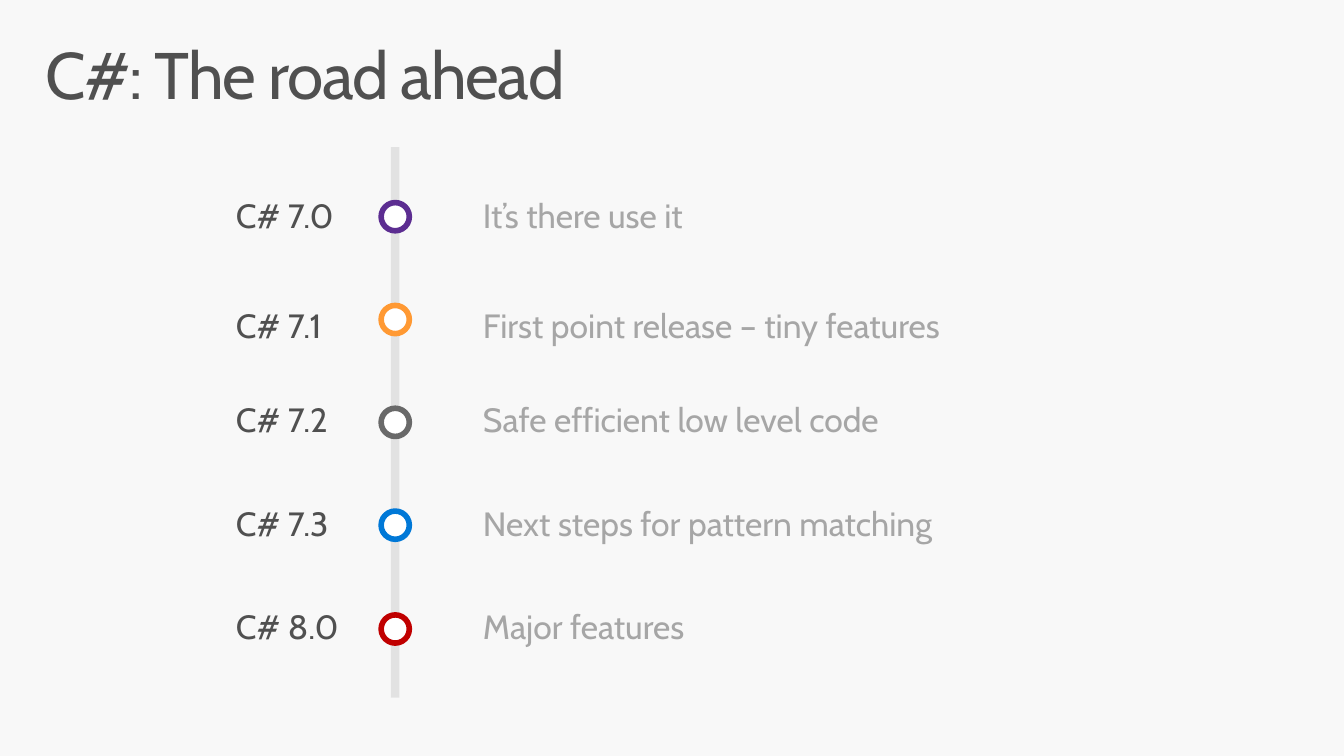
from lxml import etree
from pptx import Presentation
from pptx.dml.color import RGBColor
from pptx.enum.shapes import MSO_CONNECTOR, MSO_SHAPE
from pptx.enum.text import MSO_ANCHOR, MSO_AUTO_SIZE, PP_ALIGN
from pptx.oxml.ns import qn
from pptx.util import Pt

STRAIGHT = MSO_CONNECTOR.STRAIGHT
DOT = MSO_SHAPE.FLOWCHART_CONNECTOR
TOP = MSO_ANCHOR.TOP
LEFT = PP_ALIGN.LEFT
FIT_SHAPE = MSO_AUTO_SIZE.SHAPE_TO_FIT_TEXT
NO_FIT = MSO_AUTO_SIZE.NONE

COLORS = {
    "background": "F8F8F8",
    "track": "CDCDCD",
    "dark": "505050",
    "light": "A6A6A6",
    "white": "FFFFFF",
    "purple": "5C2D91",
    "orange": "FF9933",
    "gray": "696969",
    "blue": "0078D7",
    "red": "C00000",
}

RELEASES = [
    ("C# 7.0", "It’s there use it", 256, 182, "purple"),
    ("C# 7.1", "First point release – tiny features", 522, 291, "orange"),
    ("C# 7.2", "Safe efficient low level code", 452, 384, "gray"),
    ("C# 7.3", "Next steps for pattern matching", 512, 487, "blue"),
    ("C# 8.0", "Major features", 256, 590, "red"),
]


def px(n):
    return n * 9144


def rgb(name):
    return RGBColor.from_string(COLORS[name])


class Deck:
    font = "Cabin"

    def __init__(self, width, height):
        self.prs = Presentation()
        self.prs.slide_width = px(width)
        self.prs.slide_height = px(height)
        self.s = self.prs.slides.add_slide(self.prs.slide_layouts[6])
        fill = self.s.background.fill
        fill.solid()
        fill.fore_color.rgb = rgb("background")

    def line(self, x1, y1, x2, y2, color, width, opacity):
        sp = self.s.shapes.add_connector(STRAIGHT, px(x1), px(y1), px(x2), px(y2))
        sp.line.color.rgb = rgb(color)
        sp.line.width = Pt(width)
        clr = next(sp.line._ln.iter(qn("a:srgbClr")))
        etree.SubElement(clr, qn("a:alpha")).set("val", str(opacity * 1000))
        etree.SubElement(sp._element.spPr, qn("a:effectLst"))

    def dot(self, x, y, size, color):
        sp = self.s.shapes.add_shape(DOT, px(x), px(y), px(size), px(size))
        sp.shadow.inherit = False
        sp.fill.solid()
        sp.fill.fore_color.rgb = rgb("white")
        sp.line.color.rgb = rgb(color)
        sp.line.width = Pt(4)

    def text(self, x, y, w, h, text, color, size=24, inset=(20, 16),
             wrap=True, fit=FIT_SHAPE, after=6, spacing=None):
        sp = self.s.shapes.add_textbox(px(x), px(y), px(w), px(h))
        tf = sp.text_frame
        tf.margin_left = tf.margin_right = px(inset[0])
        tf.margin_top = tf.margin_bottom = px(inset[1])
        tf.vertical_anchor = TOP
        tf.word_wrap = wrap
        tf.auto_size = fit
        p = tf.paragraphs[0]
        p.alignment = LEFT
        p.line_spacing = 0.9
        p.space_after = Pt(after)
        r = p.add_run()
        r.text = text
        r.font.name = self.font
        r.font.size = Pt(size)
        r.font.color.rgb = rgb(color)
        if spacing is not None:
            r.font._element.set("spc", str(spacing * 100))


def main():
    deck = Deck(1333, 750)
    deck.line(392, 146, 392, 692, "track", 6, 50)
    deck.text(29, 32, 637, 98, "C#: The road ahead", "dark", size=47,
              inset=(16, 10), fit=NO_FIT, after=0, spacing=-1)
    for i, (version, summary, width, top, color) in enumerate(RELEASES):
        deck.dot(378, 201 + i * 409 // 4, 28, color)
        deck.text(214, top, 150, 69, version, "dark")
        deck.text(459, top, width, 69, summary, "light", wrap=False)
    deck.prs.save("out.pptx")


if __name__ == "__main__":
    main()
